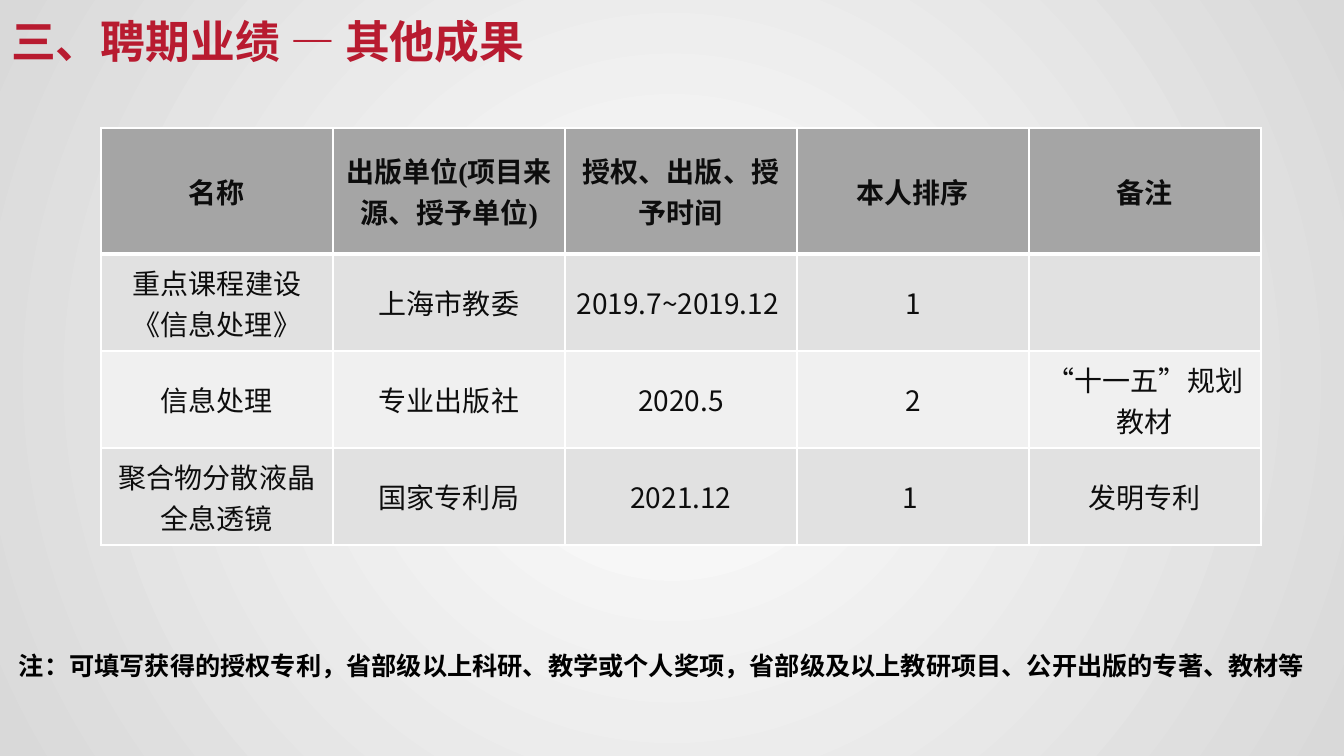
from dataclasses import dataclass

from lxml.etree import SubElement
from pptx import Presentation
from pptx.dml.color import RGBColor
from pptx.enum.text import MSO_ANCHOR as Anchor, MSO_AUTO_SIZE as AutoSize, PP_ALIGN as Align
from pptx.oxml.ns import qn
from pptx.util import Pt

EMU_PER_PX = 914400 / 100.8


@dataclass(frozen=True)
class Theme:
    """Colours, fonts and type sizes of the slide."""
    title: str = "B81B30"
    cell: str = "0D0D0D"
    note: str = "000000"
    white: str = "FFFFFF"
    edge: str = "D9D9D9"
    header_fill: str = "A5A5A5"
    band_fills: tuple = ("E1E1E1", "F0F0F0")
    sans: str = "Noto Sans CJK SC"
    serif: str = "Times New Roman"
    note_font: str = "Arial"
    title_size: int = 32
    cell_size: int = 20
    note_size: int = 18


THEME = Theme()
TITLE = "三、聘期业绩 — 其他成果"
NOTE = "注：可填写获得的授权专利，省部级以上科研、教学或个人奖项，省部级及以上教研项目、公开出版的专著、教材等"
ROWS = [
    ["名称", "出版单位(项目来源、授予单位)", "授权、出版、授予时间", "本人排序", "备注"],
    ["重点课程建设《信息处理》", "上海市教委", "2019.7~2019.12 ", "1", ""],
    ["信息处理", "专业出版社", "2020.5", "2", "“十一五”规划教材"],
    ["聚合物分散液晶全息透镜", "国家专利局", "2021.12", "1 ", "发明专利"],
]
COLUMN_WIDTH = 232
HEADER_HEIGHT, ROW_HEIGHT = 126, 97


def px(length):
    """Turn pixels into EMU."""
    return round(length * EMU_PER_PX)


def apply_format(target, values):
    """Set each attribute named in a dict."""
    for name, value in values.items():
        setattr(target, name, value)


def place(shape, left, top, width, height):
    """Position a shape in pixels."""
    apply_format(shape, {"left": px(left), "top": px(top), "width": px(width), "height": px(height)})


def write_text(frame, text, font, size, color, bold=True, align=Align.LEFT):
    """Write one formatted paragraph and return it."""
    paragraph = frame.paragraphs[0]
    apply_format(paragraph, {"alignment": align, "space_before": Pt(0)})
    if text:
        run = paragraph.add_run()
        run.text = text
        apply_format(run.font, {"name": font, "size": Pt(size), "bold": bold})
        run.font.color.rgb = RGBColor.from_string(color)
        SubElement(run.font._element, qn("a:ea"), typeface=THEME.sans)
    else:
        paragraph.font.size = Pt(size)
    return paragraph


def paint_background(slide):
    """Fill the background with a circular gradient."""
    fill = slide.background.fill
    fill.gradient()
    for stop, color in zip(fill.gradient_stops, (THEME.white, THEME.edge)):
        stop.color.rgb = RGBColor.from_string(color)
    gradient = slide.background._cSld.find(".//" + qn("a:gradFill"))
    gradient.remove(gradient.find(qn("a:lin")))
    circle = SubElement(gradient, qn("a:path"), path="circle")
    SubElement(circle, qn("a:fillToRect"), {side: "50000" for side in "ltrb"})


def add_title(slide):
    """Format the title placeholder."""
    title = slide.shapes.title
    place(title, 1, 9, 548, 65)
    apply_format(title.text_frame, {"word_wrap": False, "vertical_anchor": Anchor.TOP,
                                    "auto_size": AutoSize.SHAPE_TO_FIT_TEXT})
    write_text(title.text_frame, TITLE, THEME.sans, THEME.title_size, THEME.title)


def add_borders(cell, widths):
    """Draw white cell borders with widths in points by side."""
    properties = cell._tc.get_or_add_tcPr()
    for side, width in widths.items():
        line = SubElement(properties, qn("a:ln" + side), w=str(Pt(width)))
        SubElement(SubElement(line, qn("a:solidFill")), qn("a:srgbClr"), val=THEME.white)


def add_cell(cell, text, row):
    """Style and fill one table cell."""
    is_header = row == 0
    add_borders(cell, {"L": 1, "R": 1, "T": 3 if row == 1 else 1, "B": 3 if is_header else 1})
    cell.fill.solid()
    color = THEME.header_fill if is_header else THEME.band_fills[(row - 1) % 2]
    cell.fill.fore_color.rgb = RGBColor.from_string(color)
    cell.vertical_anchor = Anchor.MIDDLE
    font = THEME.serif if is_header else THEME.sans
    write_text(cell.text_frame, text, font, THEME.cell_size, THEME.cell, is_header, Align.CENTER)


def add_results_table(slide):
    """Add the table of results."""
    heights = [HEADER_HEIGHT] + [ROW_HEIGHT] * (len(ROWS) - 1)
    columns = len(ROWS[0])
    table = slide.shapes.add_table(len(ROWS), columns, px(101), px(128),
                                   px(columns * COLUMN_WIDTH), px(sum(heights))).table
    for column in table.columns:
        column.width = px(COLUMN_WIDTH)
    for row, (height, texts) in enumerate(zip(heights, ROWS)):
        table.rows[row].height = px(height)
        for column, text in enumerate(texts):
            add_cell(table.cell(row, column), text, row)


def add_note(slide):
    """Add the note under the table."""
    box = slide.shapes.add_textbox(px(9), px(645), px(1373), px(40))
    apply_format(box.text_frame, {"word_wrap": True, "auto_size": AutoSize.SHAPE_TO_FIT_TEXT})
    paragraph = write_text(box.text_frame, NOTE, THEME.note_font, THEME.note_size, THEME.note)
    indent = px(83)
    properties = paragraph._p.get_or_add_pPr()
    properties.set("marL", str(indent))
    properties.set("indent", str(-indent))


def main():
    """Build and save the slide."""
    presentation = Presentation()
    apply_format(presentation, {"slide_width": px(1344), "slide_height": px(756)})
    slide = presentation.slides.add_slide(presentation.slide_layouts[5])
    paint_background(slide)
    add_title(slide)
    add_results_table(slide)
    add_note(slide)
    presentation.save("out.pptx")


if __name__ == "__main__":
    main()
